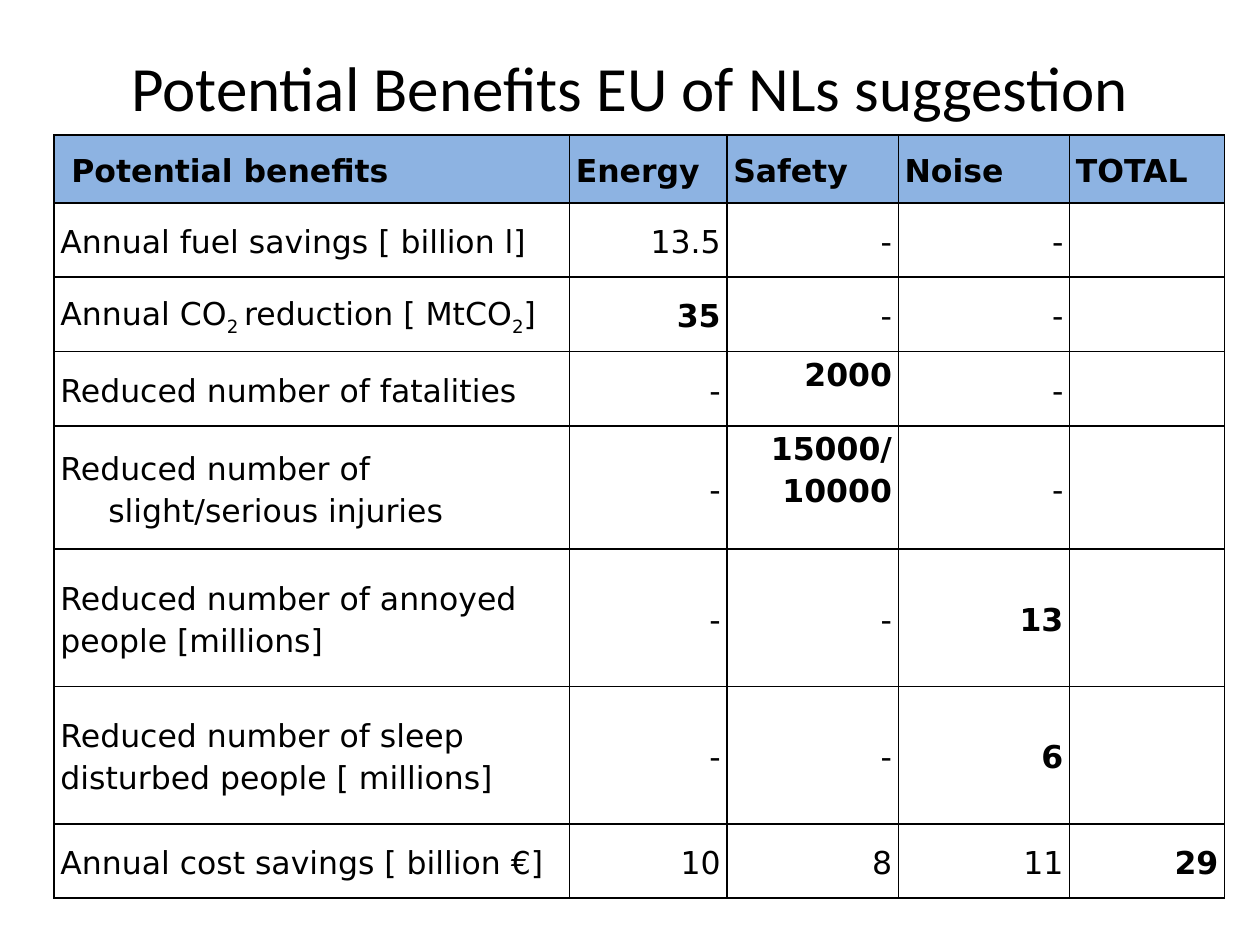
from lxml import etree
from pptx import Presentation
from pptx.dml.color import RGBColor
from pptx.enum.text import MSO_ANCHOR, PP_ALIGN
from pptx.oxml.ns import qn
from pptx.util import Inches, Pt

TOP, MIDDLE = MSO_ANCHOR.TOP, MSO_ANCHOR.MIDDLE
LEFT, CENTER, RIGHT = PP_ALIGN.LEFT, PP_ALIGN.CENTER, PP_ALIGN.RIGHT

TITLE = "Potential Benefits EU of NLs suggestion"
BLACK, BLUE = "000000", "8DB3E2"

# A leading * makes a cell bold; _ switches subscript on and off.
ROWS = [
    ("* Potential benefits", "*Energy", "*Safety", "*Noise", "*TOTAL"),
    ("Annual fuel savings [ billion l]", "13.5", "-", "-", ""),
    ("Annual CO_2 _reduction [ MtCO_2_]", "*35", "-", "-", ""),
    ("Reduced number of fatalities", "-", "*2000", "-", ""),
    ("Reduced number of slight/serious injuries", "-", "*15000/\n10000", "-", ""),
    ("Reduced number of annoyed people [millions]", "-", "-", "*13", ""),
    ("Reduced number of sleep disturbed people [ millions]", "-", "-", "*6", ""),
    ("Annual cost savings [ billion €]", "10", "8", "11", "*29"),
]
WIDTHS = [4.09, 1.25, 1.36, 1.36, 1.23]
HEIGHTS = [0.54, 0.59, 0.59, 0.59, 0.98, 1.09, 1.09, 0.59]
TOP_CELLS = {(3, 2), (4, 2)}
HANGING = (4, 0)
INDENT = 0.38


def color(code):
    return RGBColor.from_string(code)


def write(frame, text, size=18, font="DejaVu Sans", bold=False,
          align=LEFT, spacing=1.15, indent=0):
    frame.word_wrap = True
    for i, line in enumerate(text.split("\n")):
        para = frame.add_paragraph() if i else frame.paragraphs[0]
        para.alignment, para.line_spacing = align, spacing
        if indent:
            props = para._p.get_or_add_pPr()
            props.set("marL", str(Inches(indent)))
            props.set("indent", str(-Inches(indent)))
        for j, part in enumerate(line.split("_")):
            if not part:
                continue
            run = para.add_run()
            run.text = part
            run.font.size, run.font.name = Pt(size), font
            run.font.bold = bold
            run.font.color.rgb = color(BLACK)
            if j % 2:
                run._r.get_or_add_rPr().set("baseline", "-25000")


def border(cell):
    props = cell._tc.get_or_add_tcPr()
    for side in ("a:lnL", "a:lnR", "a:lnT", "a:lnB"):
        line = etree.SubElement(props, qn(side), w=str(Pt(1)))
        fill = etree.SubElement(line, qn("a:solidFill"))
        etree.SubElement(fill, qn("a:srgbClr"), val=BLACK)


def add_title(slide):
    box = slide.shapes.add_textbox(Inches(0.5), Inches(0.3), Inches(9), Inches(0.77))
    box.text_frame.vertical_anchor = MIDDLE
    write(box.text_frame, TITLE, size=36, font="Calibri", align=CENTER, spacing=1)


def add_benefits(slide):
    table = slide.shapes.add_table(
        len(ROWS), len(WIDTHS), Inches(0.43), Inches(1.07),
        Inches(sum(WIDTHS)), Inches(sum(HEIGHTS))).table
    table.first_row = table.horz_banding = False
    for col, width in zip(table.columns, WIDTHS):
        col.width = Inches(width)
    for row, height in zip(table.rows, HEIGHTS):
        row.height = Inches(height)
    for r, row in enumerate(ROWS):
        for c, text in enumerate(row):
            cell = table.cell(r, c)
            border(cell)
            if r == 0:
                cell.fill.solid()
                cell.fill.fore_color.rgb = color(BLUE)
            else:
                cell.fill.background()
            cell.margin_left = cell.margin_right = Inches(0.05)
            cell.margin_top = cell.margin_bottom = 0
            cell.vertical_anchor = TOP if (r, c) in TOP_CELLS else MIDDLE
            write(cell.text_frame, text.lstrip("*"), bold=text.startswith("*"),
                  align=RIGHT if r and c else LEFT,
                  indent=INDENT if (r, c) == HANGING else 0)


def main():
    deck = Presentation()
    deck.slide_width, deck.slide_height = Inches(10), Inches(7.5)
    slide = deck.slides.add_slide(deck.slide_layouts[6])
    add_benefits(slide)
    add_title(slide)
    deck.save("out.pptx")


if __name__ == "__main__":
    main()
